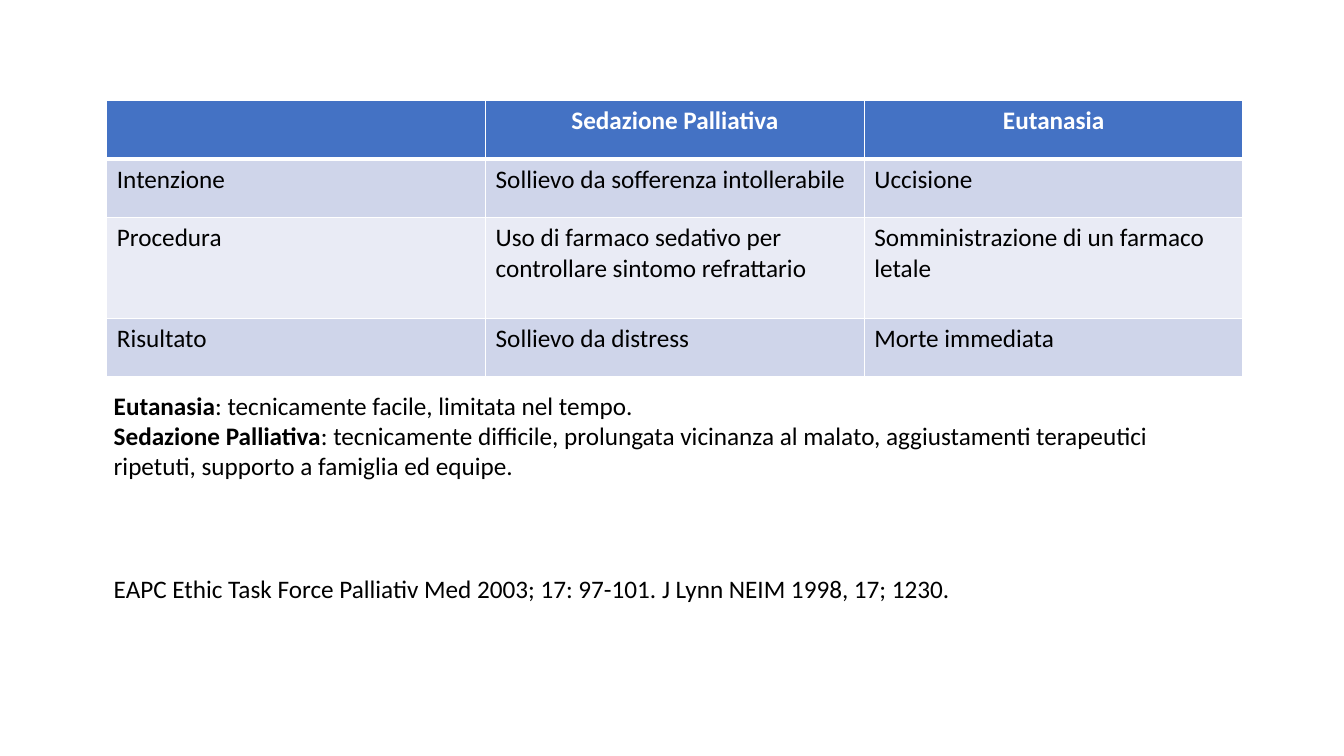
"""Build a slide comparing palliative sedation with euthanasia."""
from lxml import etree
from pptx import Presentation
from pptx.dml.color import RGBColor
from pptx.enum.text import MSO_AUTO_SIZE, PP_ALIGN
from pptx.oxml.ns import qn
from pptx.util import Inches, Pt

ROWS = [
    ("", "Sedazione Palliativa", "Eutanasia"),
    ("Intenzione", "Sollievo da sofferenza intollerabile", "Uccisione"),
    ("Procedura", "Uso di farmaco sedativo per controllare sintomo refrattario",
     "Somministrazione di un farmaco letale"),
    ("Risultato", "Sollievo da distress", "Morte immediata"),
]
ROW_HEIGHTS = [0.58, 0.58, 1, 0.58]
NOTES = [
    ("Eutanasia", ": tecnicamente facile, limitata nel tempo."),
    ("Sedazione Palliativa", ": tecnicamente difficile, prolungata vicinanza al malato, "
     "aggiustamenti terapeutici ripetuti, supporto a famiglia ed equipe."),
]
REFERENCE = "EAPC Ethic Task Force Palliativ Med 2003; 17: 97-101. J Lynn NEIM 1998, 17; 1230."

FONT = "Calibri"
TEXT_SIZE = Pt(18)
REFERENCE_GAP = Pt(66)
CONTENT_WIDTH = 11.27
BLACK = RGBColor(0x00, 0x00, 0x00)
WHITE = RGBColor(0xFF, 0xFF, 0xFF)
HEADER_BLUE = RGBColor(0x44, 0x72, 0xC4)
BAND_DARK = RGBColor(0xCF, 0xD5, 0xEA)
BAND_LIGHT = RGBColor(0xE9, 0xEB, 0xF5)
CENTER = PP_ALIGN.CENTER
GROW = MSO_AUTO_SIZE.SHAPE_TO_FIT_TEXT


def style_font(font, color, bold):
    font.name = FONT
    font.size = TEXT_SIZE
    font.bold = bold
    font.color.rgb = color


def add_borders(cell, widths):
    properties = cell._tc.get_or_add_tcPr()
    for side, width in zip("LRTB", widths):
        line = etree.SubElement(properties, qn(f"a:ln{side}"), w=str(Pt(width)))
        fill = etree.SubElement(line, qn("a:solidFill"))
        etree.SubElement(fill, qn("a:srgbClr"), val=str(WHITE))


def add_comparison(page):
    frame = page.shapes.add_table(
        len(ROWS), len(ROWS[0]), Inches(1.06), Inches(1),
        Inches(CONTENT_WIDTH), Inches(sum(ROW_HEIGHTS)))
    table = frame.table
    for column in table.columns:
        column.width = Inches(CONTENT_WIDTH / len(ROWS[0]))
    for row_index, (texts, height) in enumerate(zip(ROWS, ROW_HEIGHTS)):
        table.rows[row_index].height = Inches(height)
        header = row_index == 0
        band = BAND_DARK if row_index % 2 else BAND_LIGHT
        top = 3 if row_index == 1 else 1
        bottom = 3 if header else 1
        for column_index, text in enumerate(texts):
            cell = table.cell(row_index, column_index)
            add_borders(cell, (1, 1, top, bottom))
            cell.fill.solid()
            cell.fill.fore_color.rgb = HEADER_BLUE if header else band
            cell.text_frame.text = text
            para = cell.text_frame.paragraphs[0]
            style_font(para.font, WHITE if header else BLACK, header)
            for span in para.runs:
                style_font(span.font, WHITE if header else BLACK, header)
            if header:
                para.alignment = CENTER


def add_notes(page):
    box = page.shapes.add_textbox(
        Inches(1.03), Inches(3.82), Inches(CONTENT_WIDTH), Inches(2.22))
    text_frame = box.text_frame
    text_frame.word_wrap = True
    text_frame.auto_size = GROW
    paragraphs = [*NOTES, ("", REFERENCE)]
    for index, (term, description) in enumerate(paragraphs):
        para = text_frame.add_paragraph() if index else text_frame.paragraphs[0]
        for text, bold in ((term, True), (description, False)):
            if text:
                span = para.add_run()
                span.text = text
                style_font(span.font, BLACK, bold)
    text_frame.paragraphs[-1].space_before = REFERENCE_GAP


def main():
    deck = Presentation()
    deck.slide_width = Inches(13.33)
    deck.slide_height = Inches(7.5)
    page = deck.slides.add_slide(deck.slide_layouts[6])
    add_comparison(page)
    add_notes(page)
    deck.save("out.pptx")


if __name__ == "__main__":
    main()
